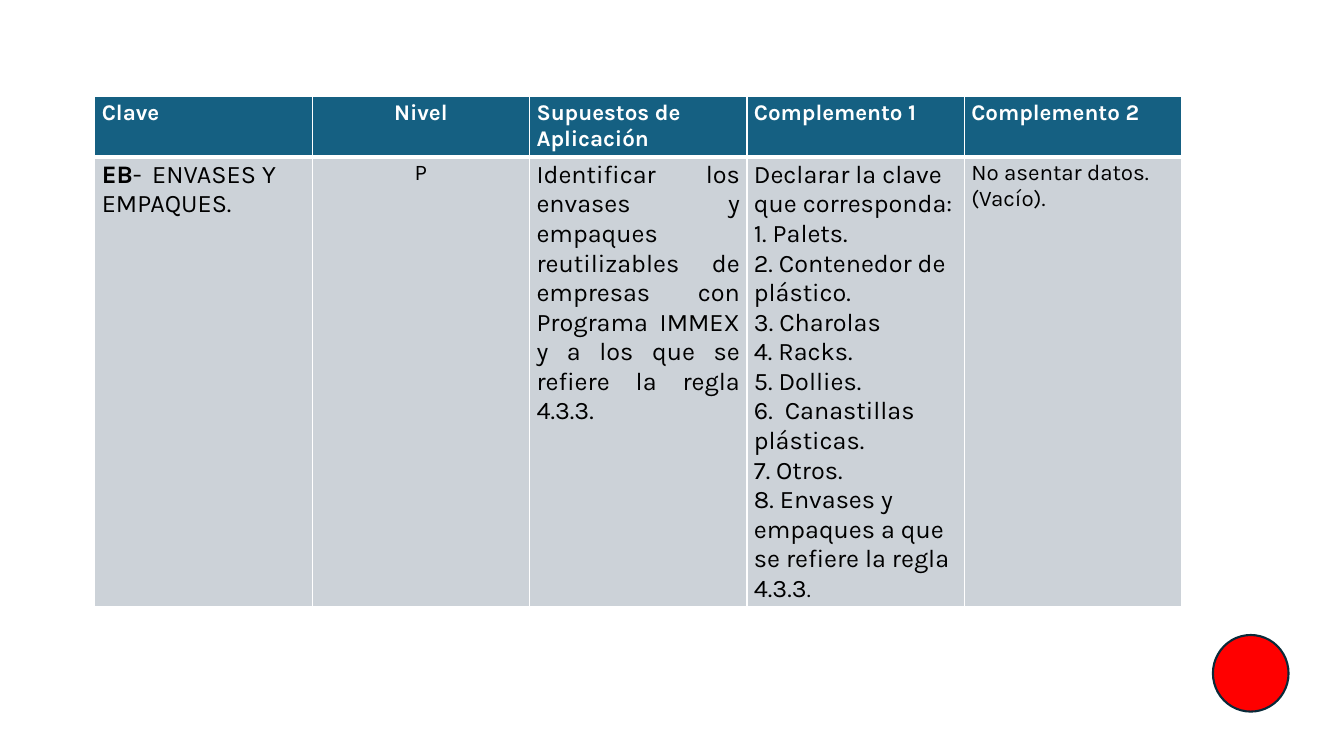
import pptx
import pptx.dml.color
import pptx.enum.shapes
import pptx.enum.text
import pptx.oxml
import pptx.oxml.ns
import pptx.util

Inches = pptx.util.Inches
Pt = pptx.util.Pt
RGBColor = pptx.dml.color.RGBColor
ALIGN = pptx.enum.text.PP_ALIGN

WHITE = RGBColor(0xFF, 0xFF, 0xFF)
BLACK = RGBColor(0x00, 0x00, 0x00)
HEADER_BLUE = RGBColor(0x15, 0x60, 0x82)
BODY_GREY = RGBColor(0xCC, 0xD2, 0xD8)
RED = RGBColor(0xFF, 0x00, 0x00)
OUTLINE = RGBColor(0x09, 0x2A, 0x39)

HEADERS = ["Clave", "Nivel", "Supuestos de Aplicación", "Complemento 1", "Complemento 2"]
# Each body cell: alignment, then paragraphs made of (text, size, bold) spans
BODY = [
    (ALIGN.LEFT, [[("EB", 18, True), ("-\tENVASES Y EMPAQUES.", 18, False)]]),
    (ALIGN.CENTER, [[("P", 16, False)]]),
    (ALIGN.JUSTIFY, [[("Identificar los envases y empaques reutilizables de empresas con "
                       "Programa IMMEX y a los que se refiere la regla 4.3.3.", 18, False)]]),
    (ALIGN.LEFT, [[(text, 18, False)] for text in (
        "Declarar la clave que corresponda:", "1. Palets.", "2. Contenedor de plástico.",
        "3. Charolas", "4. Racks.", "5. Dollies.", "6.  Canastillas plásticas.", "7. Otros.",
    )] + [[("8. Envases y empaques a que se refiere la regla 4.3.3", 18, False),
           (".", 16, False)]]),
    (ALIGN.LEFT, [[("No asentar datos. (Vacío).", 16, False)]]),
]


class PageBuilder:
    """Holds the style and the current slide."""

    font = "Karla"

    def __init__(self, page):
        self.page = page

    def table(self, left, top, width, row_heights, columns):
        frame = self.page.shapes.add_table(
            len(row_heights), columns, Inches(left), Inches(top),
            Inches(width), Inches(sum(row_heights)))
        for row, height in zip(frame.table.rows, row_heights):
            row.height = Inches(height)
        return frame.table

    def borders(self, cell, bottom):
        properties = cell._tc.get_or_add_tcPr()
        for side, points in (("L", 1), ("R", 1), ("T", 1), ("B", bottom)):
            properties.append(pptx.oxml.parse_xml(
                f'<a:ln{side} {pptx.oxml.ns.nsdecls("a")} w="{Pt(points)}">'
                f'<a:solidFill><a:srgbClr val="{WHITE}"/></a:solidFill></a:ln{side}>'))

    def cell(self, cell, paragraphs, align, fill, color, bottom=1):
        cell.margin_left = cell.margin_right = Inches(0.07)
        cell.margin_top = cell.margin_bottom = Inches(0.03)
        self.borders(cell, bottom)
        cell.fill.solid()
        cell.fill.fore_color.rgb = fill
        for index, spans in enumerate(paragraphs):
            frame = cell.text_frame
            para = frame.add_paragraph() if index else frame.paragraphs[0]
            para.alignment = align
            for text, size, bold in spans:
                span = para.add_run()
                span.text = text
                span.font.name = self.font
                span.font.size = Pt(size)
                span.font.bold = bold
                span.font.color.rgb = color

    def circle(self, left, top, width, height, fill, line):
        shape = self.page.shapes.add_shape(
            pptx.enum.shapes.MSO_SHAPE.OVAL,
            Inches(left), Inches(top), Inches(width), Inches(height))
        shape.shadow.inherit = False
        shape.fill.solid()
        shape.fill.fore_color.rgb = fill
        shape.line.color.rgb = line
        shape.line.width = Pt(1.5)


def main():
    deck = pptx.Presentation()
    deck.slide_width = Inches(13.33)
    deck.slide_height = Inches(7.5)
    builder = PageBuilder(deck.slides.add_slide(deck.slide_layouts[6]))

    # Table of identifiers
    table = builder.table(0.94, 0.96, 10.78, [0.6, 4.46], len(HEADERS))
    for column, (header, (align, paragraphs)) in enumerate(zip(HEADERS, BODY)):
        header_align = ALIGN.CENTER if header == "Nivel" else ALIGN.LEFT
        builder.cell(table.cell(0, column), [[(header, 16, True)]],
                     header_align, HEADER_BLUE, WHITE, bottom=3)
        builder.cell(table.cell(1, column), paragraphs, align, BODY_GREY, BLACK)

    # Red marker in the corner
    builder.circle(12.03, 6.3, 0.75, 0.76, RED, OUTLINE)

    deck.save("out.pptx")


if __name__ == "__main__":
    main()
